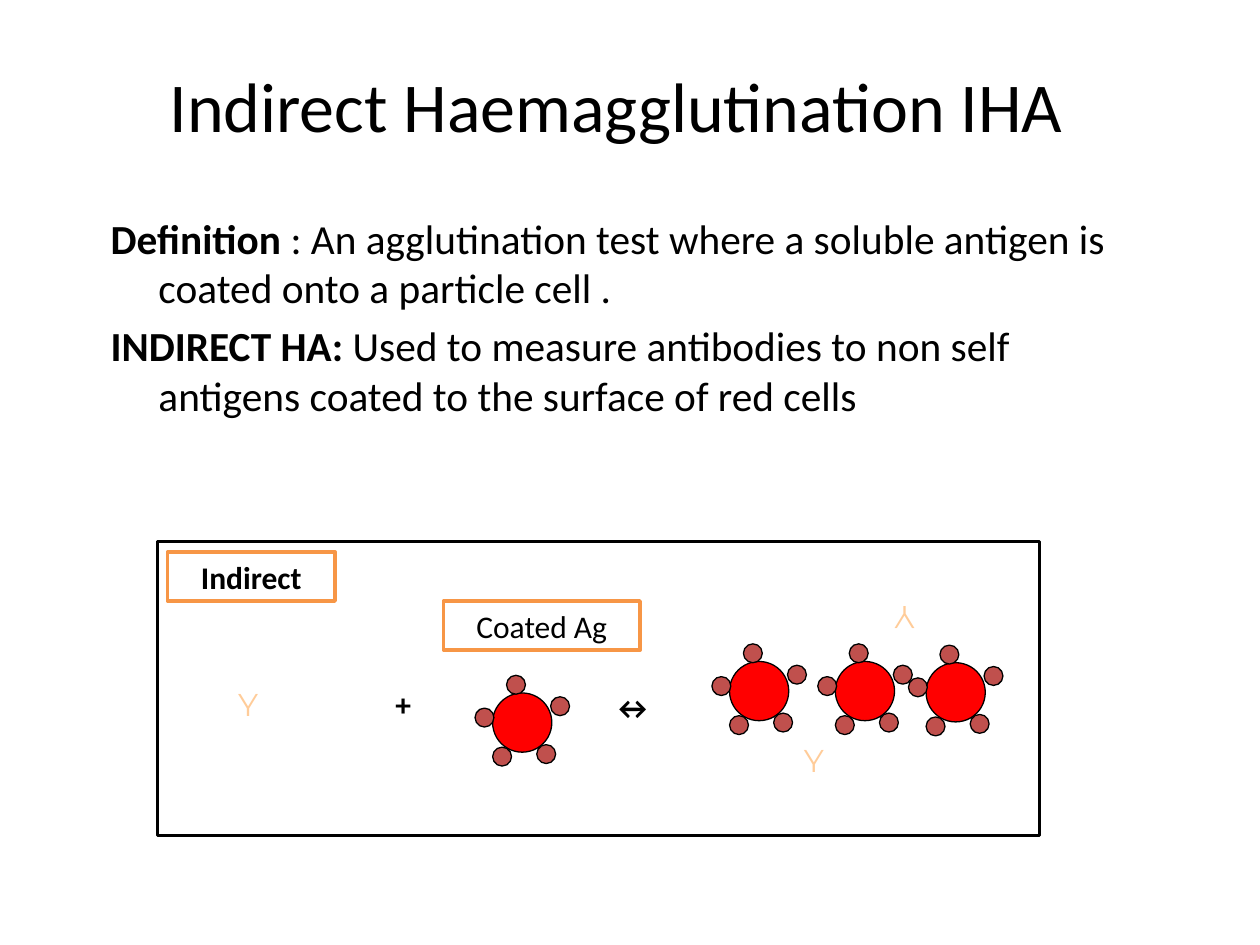
import pptx
import pptx.dml.color
import pptx.enum.shapes
import pptx.enum.text
import pptx.util
from lxml import etree
from pptx.oxml.ns import qn

RGB = pptx.dml.color.RGBColor
Pt = pptx.util.Pt
SHAPE = pptx.enum.shapes.MSO_SHAPE
ALIGN = pptx.enum.text.PP_ALIGN
ANCHOR = pptx.enum.text.MSO_ANCHOR

BLACK = RGB(0x00, 0x00, 0x00)
WHITE = RGB(0xFF, 0xFF, 0xFF)
RED_CELL = RGB(0xFF, 0x00, 0x00)
ANTIGEN = RGB(0xC0, 0x50, 0x4D)
ANTIBODY = RGB(0xFF, 0xCC, 0x99)
ORANGE = RGB(0xF7, 0x96, 0x46)

COLUMNS, ROWS = 100, 75
UNIT = pptx.util.Inches(0.1)

CELL_SIZE, ANTIGEN_SIZE = 4.7, 1.5
# Antigen positions relative to the top left of the cell, in grid units
ANTIGEN_OFFSETS = [(1.1, -1.4), (4.6, 0.3), (3.5, 4.1), (-1.4, 1.2), (0, 4.3)]
CELLS = [(39.1, 55), (57.9, 52.5), (73.5, 52.6), (66.3, 52.5)]
ANTIBODIES = [(60.6, 58.3, 0), (67.8, 44.9, 180), (15.7, 53.9, 0)]
SYMBOLS = [("+", (30.4, 53.9, 4.5, 6.3)), ("↔", (47.6, 54.1, 6.5, 11.8))]
LABELS = [("Indirect", (13.3, 43.8, 13.3, 3.9), True),
          ("Coated Ag", (35.2, 47.7, 15.6, 3.9), False)]
DEFINITIONS = [
    ("Definition", " : An agglutination test where a soluble antigen is "
                   "coated onto a particle cell ."),
    ("INDIRECT HA:", " Used to measure antibodies to non self antigens "
                     "coated to the surface of red cells"),
]


def grid(*cells):
    return [round(cell * UNIT) for cell in cells]


def apply(target, values):
    for name, value in values.items():
        setattr(target, name, value)


def add_run(paragraph, text, size=18, color=BLACK, bold=False, name="Calibri"):
    run = paragraph.add_run()
    run.text = text
    apply(run.font, {"size": Pt(size), "bold": bold, "name": name})
    run.font.color.rgb = color
    return run


def add_outlined(shapes, preset, box, fill, line, weight):
    shape = shapes.add_shape(preset, *grid(*box))
    shape.shadow.inherit = False
    shape.fill.solid()
    shape.fill.fore_color.rgb = fill
    shape.line.color.rgb = line
    shape.line.width = Pt(weight)
    return shape


def add_title(slide, text):
    title = slide.shapes.title
    place = dict(zip(("left", "top", "width", "height"), grid(1.7, 3.3, 94.4, 10)))
    apply(title, place)
    title.text_frame.vertical_anchor = ANCHOR.MIDDLE
    heading = title.text_frame.paragraphs[0]
    heading.alignment = ALIGN.CENTER
    add_run(heading, text, 40)


def add_definitions(shapes):
    frame = shapes.add_textbox(*grid(7.8, 16.4, 85, 20.3)).text_frame
    frame.word_wrap = True
    for index, (term, meaning) in enumerate(DEFINITIONS):
        paragraph = frame.add_paragraph() if index else frame.paragraphs[0]
        indent = grid(3.8)[0]
        properties = paragraph._p.get_or_add_pPr()
        properties.set("marL", str(indent))
        properties.set("indent", str(-indent))
        paragraph.space_before = Pt(4.7 if index else 0)
        add_run(paragraph, term, 23.6, bold=True)
        add_run(paragraph, meaning, 23.6)


def add_antibody(shapes, left, top, rotation):
    antibody = shapes.add_textbox(*grid(left, top, 8, 6.2))
    antibody.rotation = rotation
    antibody.text_frame.word_wrap = False
    paragraph = antibody.text_frame.paragraphs[0]
    paragraph.alignment = ALIGN.CENTER
    run = add_run(paragraph, "Y", color=ANTIBODY, name="Montserrat")
    outline = etree.Element(qn("a:ln"), w=str(Pt(0.75)))
    fill = etree.SubElement(outline, qn("a:solidFill"))
    etree.SubElement(fill, qn("a:srgbClr"), val=str(BLACK))
    run.font._element.insert(0, outline)


def add_symbol(shapes, text, box):
    frame = shapes.add_textbox(*grid(*box)).text_frame
    frame.word_wrap = True
    add_run(frame.paragraphs[0], text, bold=True)


def add_coated_cell(shapes, left, top):
    add_outlined(shapes, SHAPE.OVAL, (left, top, CELL_SIZE, CELL_SIZE),
                 RED_CELL, BLACK, 0.75)
    for across, down in ANTIGEN_OFFSETS:
        box = (left + across, top + down, ANTIGEN_SIZE, ANTIGEN_SIZE)
        add_outlined(shapes, SHAPE.OVAL, box, ANTIGEN, BLACK, 0.75)


def add_label(shapes, text, box, bold):
    label = add_outlined(shapes, SHAPE.RECTANGLE, box, WHITE, ORANGE, 2)
    apply(label.text_frame, {"word_wrap": True, "vertical_anchor": ANCHOR.MIDDLE})
    paragraph = label.text_frame.paragraphs[0]
    paragraph.alignment = ALIGN.CENTER
    add_run(paragraph, text, bold=bold)


def main():
    presentation = pptx.Presentation()
    apply(presentation, {"slide_width": COLUMNS * UNIT, "slide_height": ROWS * UNIT})
    slide = presentation.slides.add_slide(presentation.slide_layouts[5])
    add_title(slide, "Indirect Haemagglutination IHA")
    add_definitions(slide.shapes)

    diagram = slide.shapes.add_group_shape().shapes
    add_outlined(diagram, SHAPE.RECTANGLE, (12.5, 43, 70, 23.3), WHITE, BLACK, 1.5)
    for antibody in ANTIBODIES:
        add_antibody(diagram, *antibody)
    for symbol in SYMBOLS:
        add_symbol(diagram, *symbol)
    for cell in CELLS:
        add_coated_cell(diagram, *cell)
    for label in LABELS:
        add_label(slide.shapes, *label)
    presentation.save("out.pptx")


if __name__ == "__main__":
    main()
